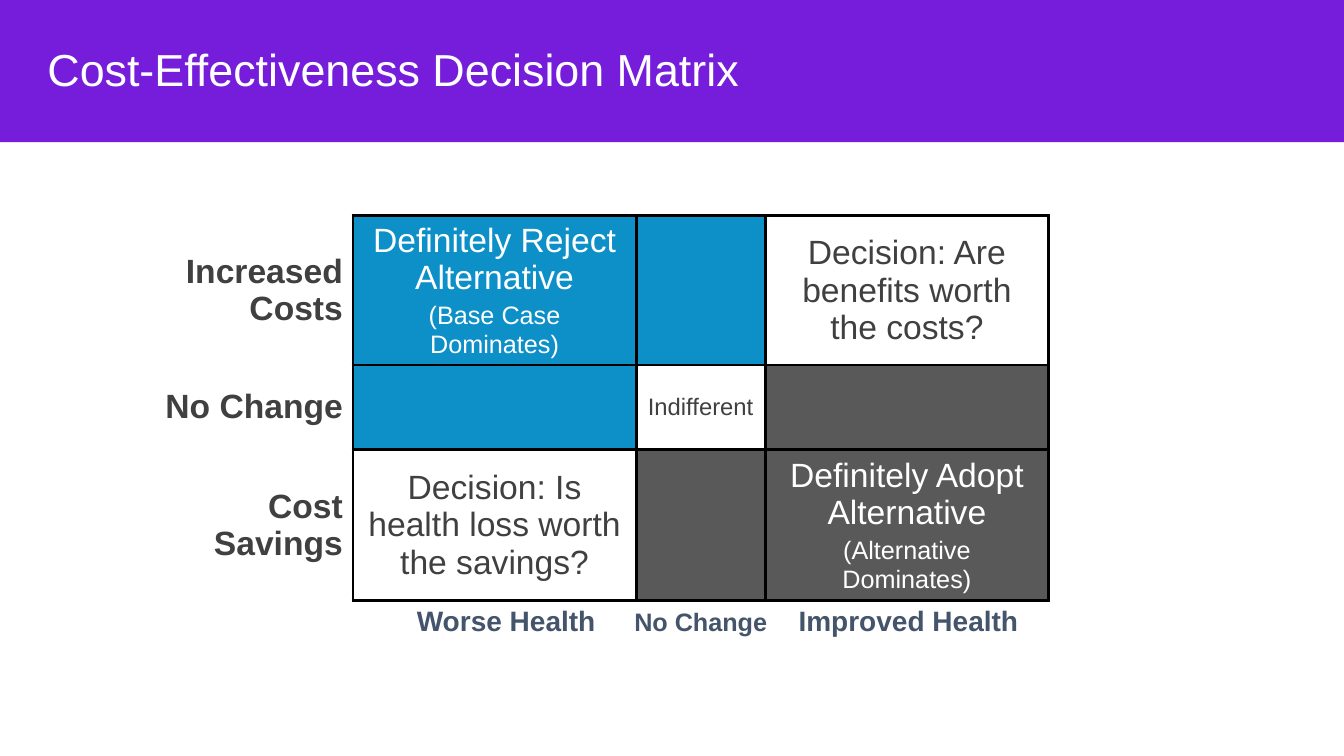
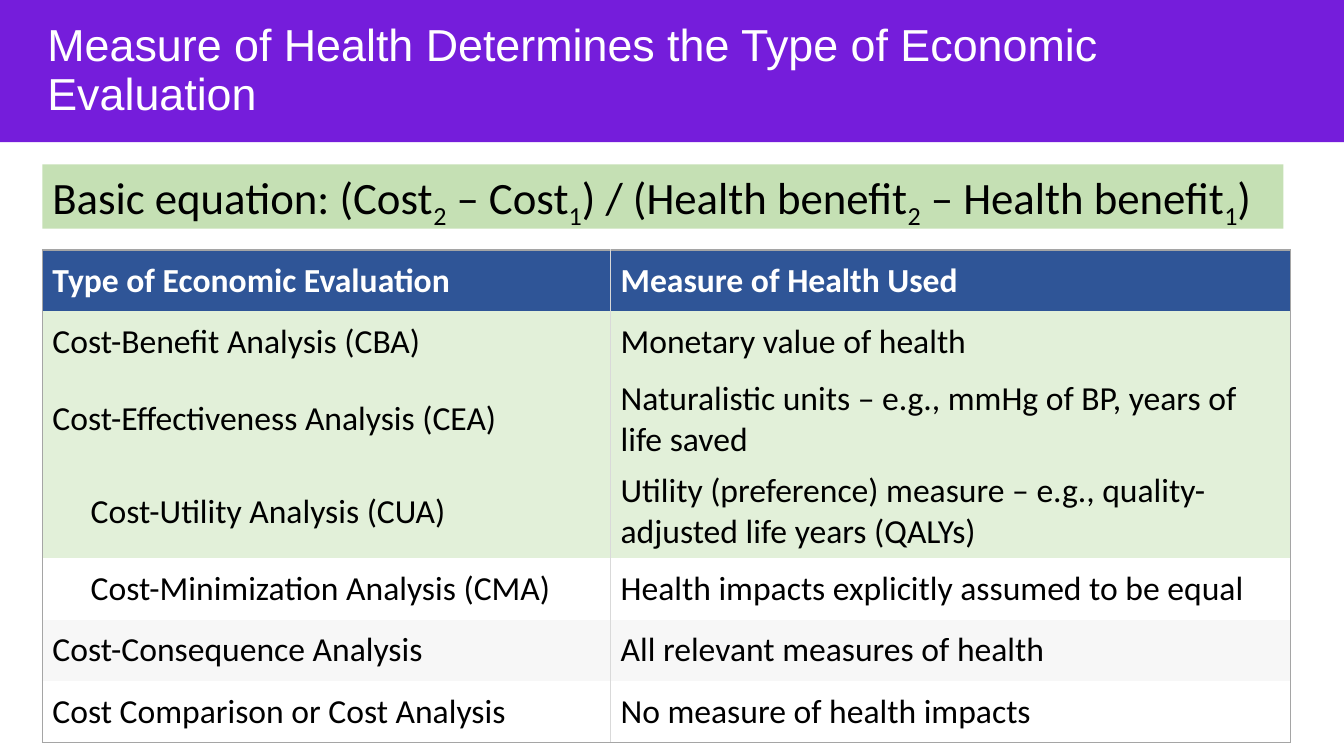
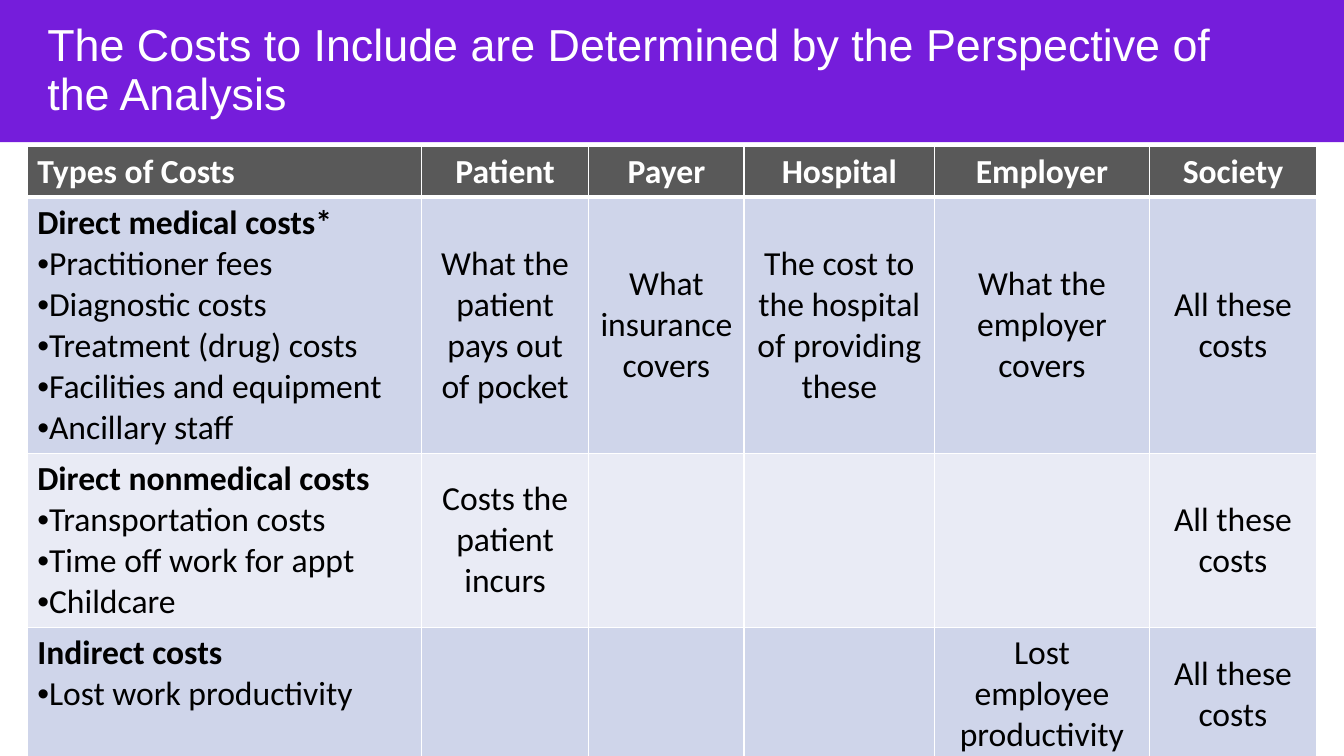
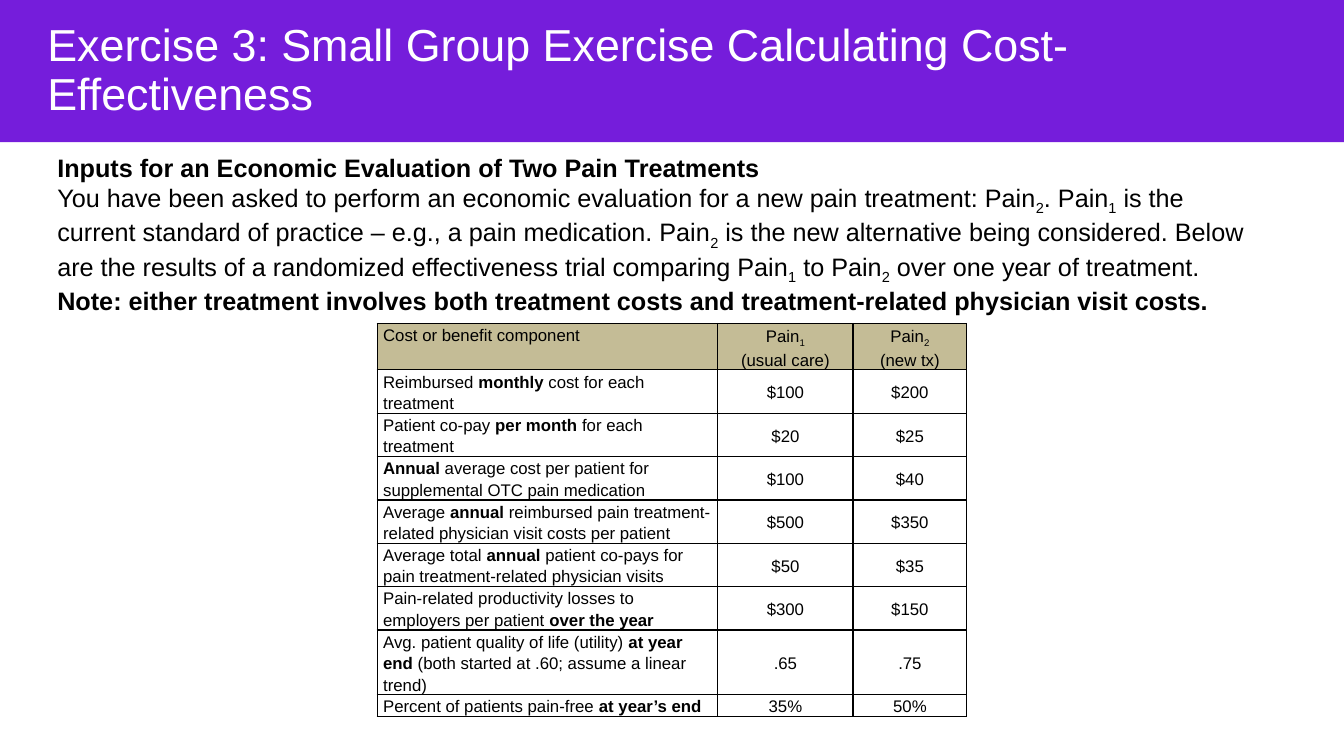
from collections import namedtuple

from pptx import Presentation
from pptx.dml.color import RGBColor
from pptx.enum.shapes import MSO_SHAPE
from pptx.enum.text import MSO_ANCHOR, MSO_AUTO_SIZE, PP_ALIGN
from pptx.oxml import parse_xml
from pptx.oxml.ns import nsdecls, qn
from pptx.util import Inches, Pt

WIDTH, HEIGHT = 13.33, 7.5
COLORS = {
    "band": "751DDB", "white": "FFFFFF", "black": "000000",
    "text": "404040", "axis": "44546A", "reject": "0D8FC8", "adopt": "595959",
    "equation": "C5E0B4", "header": "2F5597", "main": "E2F0D9", "stripe": "F7F7F7",
    "outline": "A5A5A5", "divider": "D9D9D9",
    "cost_dark": "CFD5EA", "cost_light": "E9EBF5", "input_header": "C4BC96",
}
NO_TABLE_STYLE = "{2D5ABB26-0587-4C30-8999-92F81FD0307C}"
CENTER, RIGHT = PP_ALIGN.CENTER, PP_ALIGN.RIGHT
MIDDLE, TOP = MSO_ANCHOR.MIDDLE, MSO_ANCHOR.TOP

Box = namedtuple("Box", "left top width height")


def inches(box):
    return [Inches(length) for length in box]


def color(name):
    return RGBColor.from_string(COLORS[name])


def add_text(paragraph, text, size=24, font="Calibri", fill="black", bold=False,
             align=None, before=0, spacing=None):
    """Adds runs to a paragraph; |bars| toggle bold and ~tildes~ make subscripts."""
    paragraph.alignment = align
    paragraph.space_before = Pt(before)
    if spacing:
        paragraph.line_spacing = spacing
    for bold_index, part in enumerate(text.split("|")):
        for base_index, chunk in enumerate(part.split("~")):
            if not chunk:
                continue
            run = paragraph.add_run()
            run.text = chunk
            run.font.size = Pt(size)
            run.font.name = font
            run.font.bold = bold != bool(bold_index % 2)
            run.font.color.rgb = color(fill)
            if base_index % 2:
                run.font._element.set("baseline", "-25000")


def next_paragraph(frame):
    first = frame.paragraphs[0]
    return frame.add_paragraph() if first.runs else first


def add_bullet(paragraph):
    properties = paragraph._p.get_or_add_pPr()
    properties.append(parse_xml(f'<a:buFont {nsdecls("a")} typeface="Arial"/>'))
    properties.append(parse_xml(f'<a:buChar {nsdecls("a")} char="•"/>'))


def set_borders(cell, **sides):
    """Draws cell sides L, R, T, B, each given as (colour name, points)."""
    properties = cell._tc.get_or_add_tcPr()
    for side in "LRTB":
        if side in sides:
            name, points = sides[side]
            properties.append(parse_xml(
                f'<a:ln{side} {nsdecls("a")} w="{Pt(points)}"><a:solidFill>'
                f'<a:srgbClr val="{COLORS[name]}"/></a:solidFill></a:ln{side}>'))


def format_cell(cell, fill=None, anchor=MIDDLE, borders=None, margins=None):
    set_borders(cell, **(borders or {}))
    if fill:
        cell.fill.solid()
        cell.fill.fore_color.rgb = color(fill)
    cell.vertical_anchor = anchor
    if margins:
        cell.margin_left = cell.margin_right = Inches(margins[0])
        cell.margin_top = cell.margin_bottom = Inches(margins[1])


def add_plain_table(slide, box, columns, rows):
    """Adds an unstyled table whose columns and rows share the box by weight."""
    table = slide.shapes.add_table(len(rows), len(columns), *inches(box)).table
    table.first_row = table.horz_banding = False
    table._tbl.tblPr.find(qn("a:tableStyleId")).text = NO_TABLE_STYLE
    for column, weight in zip(table.columns, columns):
        column.width = Inches(box.width * weight / sum(columns))
    for row, weight in zip(table.rows, rows):
        row.height = Inches(box.height * weight / sum(rows))
    return table


def style_layout(layout, slide):
    """Puts the band and the title style on the layout that all slides share."""
    band = slide.shapes.add_shape(MSO_SHAPE.RECTANGLE, 0, 0, Inches(WIDTH), Inches(1.41))
    band.fill.solid()
    band.fill.fore_color.rgb = color("band")
    band.line.fill.background()
    band.shadow.inherit = False
    layout.shapes._spTree.insert(2, band._element)

    title = layout.placeholders[0]
    title.left, title.top, title.width, title.height = inches(Box(0.47, 0.14, 12.24, 1.14))
    frame = title.text_frame
    frame.margin_left = frame.margin_right = frame.margin_top = frame.margin_bottom = 0
    frame.vertical_anchor = MIDDLE
    frame.auto_size = MSO_AUTO_SIZE.NONE
    frame._txBody.find(qn("a:lstStyle")).append(parse_xml(
        f'<a:lvl1pPr {nsdecls("a")} algn="l"><a:lnSpc><a:spcPct val="90000"/></a:lnSpc>'
        f'<a:defRPr sz="3200"><a:solidFill><a:srgbClr val="{COLORS["white"]}"/></a:solidFill>'
        '<a:latin typeface="Arial"/></a:defRPr></a:lvl1pPr>'))


def fill_decision_matrix(slide, box):
    edge = ("black", 2.25)
    grid = [
        [("Increased Costs", None), ("Definitely Reject Alternative\n(Base Case Dominates)", "reject"),
         ("", "reject"), ("Decision: Are benefits worth the costs?", None)],
        [("No Change", None), ("", "reject"), ("Indifferent", None), ("", "adopt")],
        [("Cost Savings", None), ("Decision: Is health loss worth the savings?", None),
         ("", "adopt"), ("Definitely Adopt Alternative\n(Alternative Dominates)", "adopt")],
    ]
    table = add_plain_table(slide, box, (2.3, 2.81, 1.28, 2.81), (1.48, 0.84, 1.5, 1.12))
    for row, entries in enumerate(grid):
        for column, (text, fill) in enumerate(entries):
            cell = table.cell(row, column)
            is_label = column == 0
            format_cell(cell, fill, borders=dict.fromkeys("R" if is_label else "LRTB", edge))
            for index, line in enumerate(text.split("\n")):
                size = 18 if index else 17 if line == "Indifferent" else 24
                add_text(next_paragraph(cell.text_frame), line, size=size, font="Arial",
                         fill="white" if fill else "text", bold=is_label,
                         align=RIGHT if is_label else CENTER, before=size * 0.2)

    axis = table.cell(3, 1)
    axis.merge(table.cell(3, 3))
    format_cell(axis, anchor=TOP, borders={"T": edge})
    paragraph = axis.text_frame.paragraphs[0]
    for label, size in (("Worse Health", 20), ("No Change", 18), ("Improved Health", 20)):
        add_text(paragraph, "\t" + label, size=size, font="Arial", fill="axis", bold=True, before=4)
    stops = "".join(f'<a:tab pos="{Inches(stop)}" algn="ctr"/>' for stop in (1.42, 3.35, 5.41))
    paragraph._p.get_or_add_pPr().append(
        parse_xml(f'<a:tabLst {nsdecls("a")}>{stops}</a:tabLst>'))


def add_equation(slide, box):
    shape = slide.shapes.add_shape(MSO_SHAPE.RECTANGLE, *inches(box))
    shape.shadow.inherit = False
    shape.fill.solid()
    shape.fill.fore_color.rgb = color("equation")
    shape.line.fill.background()
    shape.text_frame.vertical_anchor = TOP
    add_text(shape.text_frame.paragraphs[0],
             "Basic equation: (Cost~2~ – Cost~1~) / (Health benefit~2~ – Health benefit~1~)",
             size=32, align=PP_ALIGN.LEFT)


def fill_evaluation_types(slide, box):
    rows = [
        ("Type of Economic Evaluation", "Measure of Health Used", "header"),
        ("Cost-Benefit Analysis (CBA)", "Monetary value of health", "main"),
        ("Cost-Effectiveness Analysis (CEA)",
         "Naturalistic units – e.g., mmHg of BP, years of life saved", "main"),
        ("Cost-Utility Analysis (CUA)",
         "Utility (preference) measure – e.g., quality-adjusted life years (QALYs)", "main"),
        ("Cost-Minimization Analysis (CMA)", "Health impacts explicitly assumed to be equal", "white"),
        ("Cost-Consequence Analysis", "All relevant measures of health", "stripe"),
        ("Cost Comparison or Cost Analysis", "No measure of health impacts", "white"),
    ]
    indented_rows = (3, 4)
    outline, divider = ("outline", 1), ("divider", 1)
    table = add_plain_table(slide, box, (5.64, 6.75), (0.61, 0.61, 0.92, 0.92, 0.61, 0.61, 0.61))
    for row, (*texts, fill) in enumerate(rows):
        for column, text in enumerate(texts):
            borders = {"L": divider, "R": outline} if column else {"L": outline, "R": divider}
            if row == 0:
                borders["T"] = outline
            if row == len(rows) - 1:
                borders["B"] = outline
            cell = table.cell(row, column)
            format_cell(cell, fill, borders=borders)
            paragraph = cell.text_frame.paragraphs[0]
            add_text(paragraph, text, fill="black" if row else "white", bold=row == 0)
            if column == 0 and row in indented_rows:
                paragraph._p.get_or_add_pPr().set("marL", str(Inches(0.38)))


def fill_cost_perspectives(slide, box):
    rows = [
        ("Types of Costs", "Patient", "Payer", "Hospital", "Employer", "Society"),
        ("Direct medical costs*\nPractitioner fees\nDiagnostic costs\nTreatment (drug) costs\n"
         "Facilities and equipment\nAncillary staff",
         "What the patient pays out of pocket", "What insurance covers",
         "The cost to the hospital of providing these", "What the employer covers",
         "All these costs"),
        ("Direct nonmedical costs\nTransportation costs\nTime off work for appt\nChildcare",
         "Costs the patient incurs", "", "", "", "All these costs"),
        ("Indirect costs\nLost work productivity", "", "", "",
         "Lost employee productivity", "All these costs"),
    ]
    fills = ("adopt", "cost_dark", "cost_light", "cost_dark")
    thin, thick = ("white", 1), ("white", 3)
    table = add_plain_table(slide, box, (3.91, 1.66, 1.54, 1.89, 2.13, 1.66),
                            (0.5, 2.54, 1.73, 1.32))
    for row, (texts, fill) in enumerate(zip(rows, fills)):
        for column, text in enumerate(texts):
            cell = table.cell(row, column)
            borders = {"L": thin, "R": thin, "T": thick if row == 1 else thin,
                       "B": thin if row else thick}
            format_cell(cell, fill, MIDDLE if row and column else TOP, borders)
            for index, line in enumerate(text.split("\n")):
                paragraph = next_paragraph(cell.text_frame)
                add_text(paragraph, line, fill="black" if row else "white",
                         bold=row == 0 or (column == 0 and index == 0),
                         align=CENTER if column else None)
                if index:
                    add_bullet(paragraph)


def add_exercise_text(slide, box):
    frame = slide.shapes.add_textbox(*inches(box)).text_frame
    frame.word_wrap = True
    for text in (
        "|Inputs for an Economic Evaluation of Two Pain Treatments|",
        "You have been asked to perform an economic evaluation for a new pain treatment: Pain~2~. "
        "Pain~1~ is the current standard of practice – e.g., a pain medication. Pain~2~ is the new "
        "alternative being considered. Below are the results of a randomized effectiveness trial "
        "comparing Pain~1~ to Pain~2~ over one year of treatment. |Note: either treatment involves "
        "both treatment costs and treatment-related physician visit costs.|",
    ):
        add_text(next_paragraph(frame), text, size=18, font="Arial")


def fill_exercise_inputs(slide, box):
    rows = [
        ("Cost or benefit component", "Pain~1~\n(usual care)", "Pain~2~\n(new tx)"),
        ("Reimbursed |monthly| cost for each treatment", "$100", "$200"),
        ("Patient co-pay |per month| for each treatment", "$20", "$25"),
        ("|Annual |average cost per patient for supplemental OTC pain medication", "$100", "$40"),
        ("Average |annual| reimbursed pain treatment-related physician visit costs per patient",
         "$500", "$350"),
        ("Average total |annual| patient co-pays for pain treatment-related physician visits",
         "$50", "$35"),
        ("Pain-related productivity losses to employers per patient |over the year|",
         "$300", "$150"),
        ("Avg. patient quality of life (utility) |at year end| (both started at .60; "
         "assume a linear trend)", ".65", ".75"),
        ("Percent of patients pain-free |at year’s end|", "35%", "50%"),
    ]
    table = add_plain_table(slide, box, (3.38, 1.34, 1.13), [0.46] + [0.43] * 6 + [0.64, 0.21])
    for row, texts in enumerate(rows):
        for column, text in enumerate(texts):
            cell = table.cell(row, column)
            format_cell(cell, None if row else "input_header", MIDDLE if column else TOP,
                        dict.fromkeys("LRTB", ("black", 1)), margins=(0.06, 0))
            for line in text.split("\n"):
                add_text(next_paragraph(cell.text_frame), line, size=12, font="Arial",
                         align=CENTER if column else None, spacing=1.15)


def main():
    presentation = Presentation()
    presentation.slide_width, presentation.slide_height = Inches(WIDTH), Inches(HEIGHT)
    layout = presentation.slide_layouts[5]
    contents = [
        ("Cost-Effectiveness Decision Matrix",
         [(fill_decision_matrix, Box(1.2, 2.14, 9.2, 4.94))]),
        ("Measure of Health Determines the Type of Economic Evaluation",
         [(fill_evaluation_types, Box(0.42, 2.48, 12.38, 4.89)),
          (add_equation, Box(0.42, 1.63, 12.31, 0.64))]),
        ("The Costs to Include are Determined by the Perspective of the Analysis",
         [(fill_cost_perspectives, Box(0.27, 1.45, 12.79, 6.09))]),
        ("Exercise 3: Small Group Exercise Calculating Cost-Effectiveness",
         [(fill_exercise_inputs, Box(3.74, 3.21, 5.85, 3.89)),
          (add_exercise_text, Box(0.47, 1.46, 12.11, 1.75))]),
    ]
    for number, (title, regions) in enumerate(contents):
        slide = presentation.slides.add_slide(layout)
        if number == 0:
            style_layout(layout, slide)
        slide.shapes.title.text = title
        for fill_region, box in regions:
            fill_region(slide, box)
    presentation.save("out.pptx")


if __name__ == "__main__":
    main()
